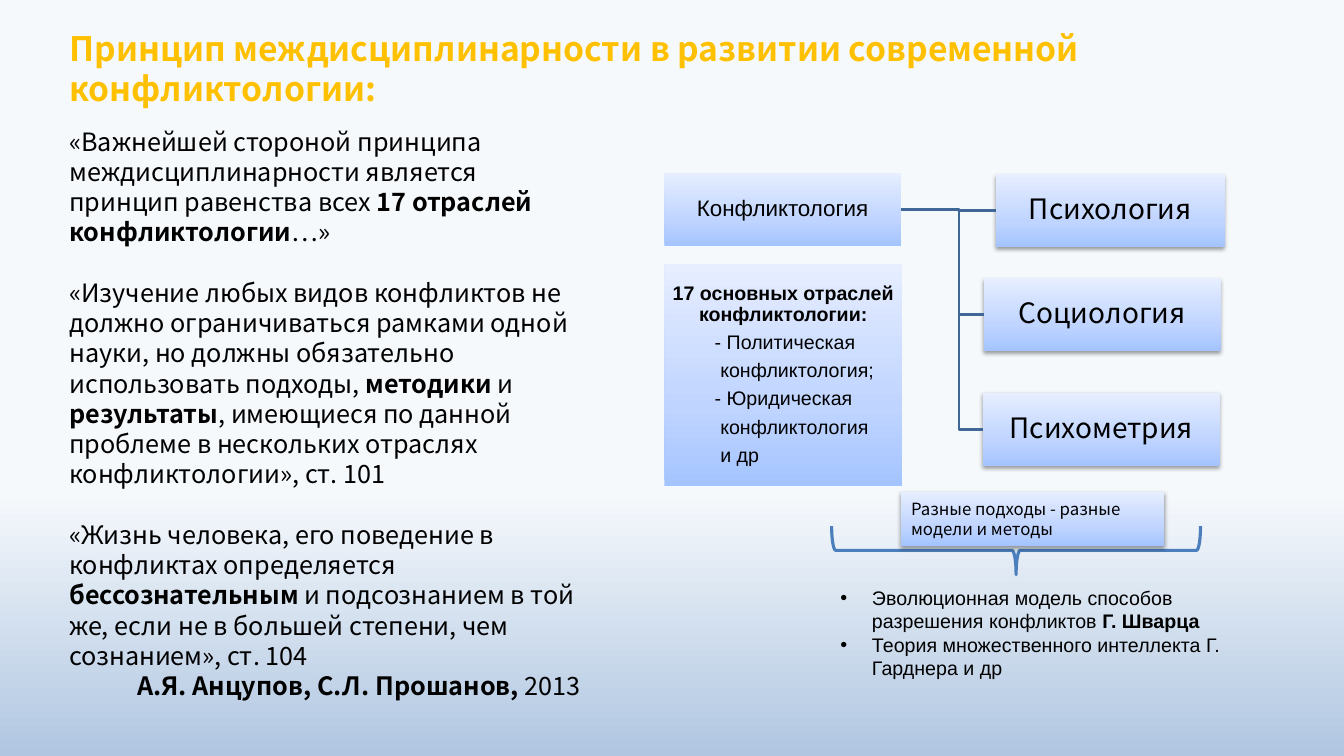
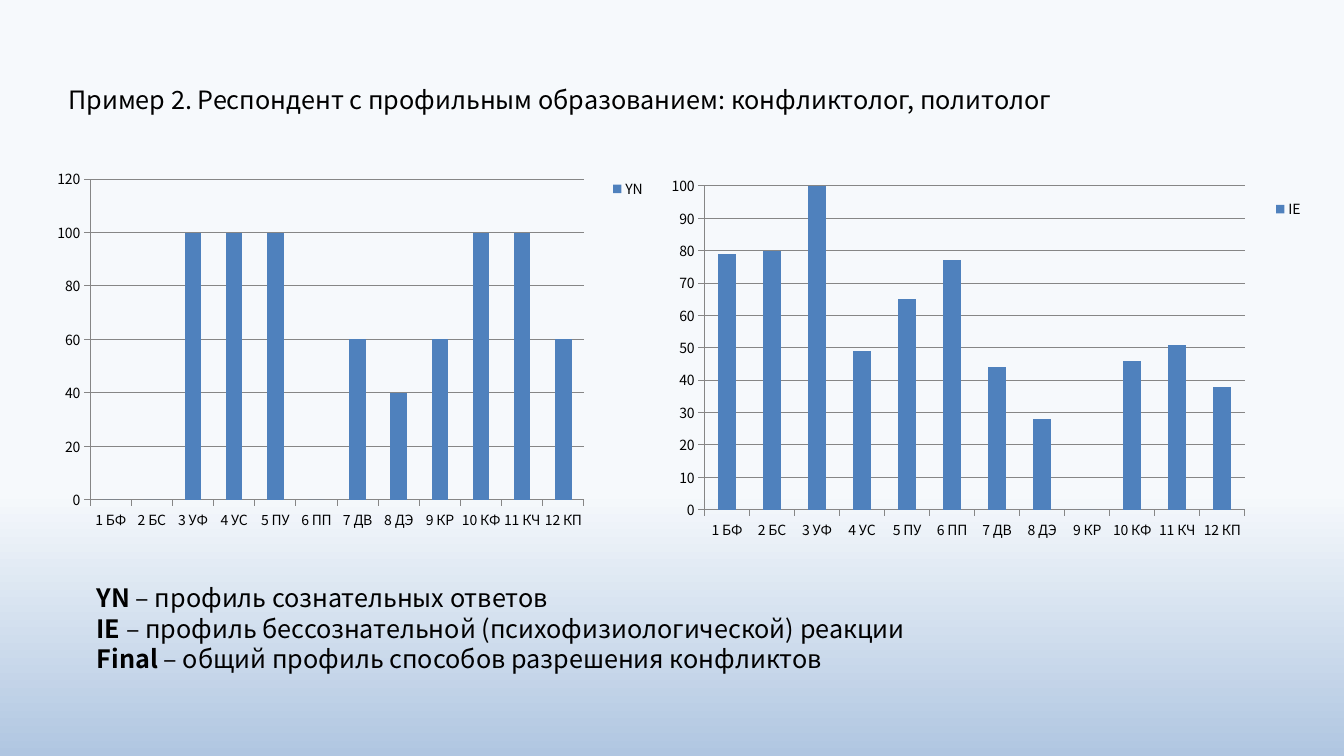
"""Build two slides on the interdisciplinary principle in conflict studies."""
import lxml.etree
import pptx
import pptx.chart.data
import pptx.dml.color
import pptx.enum.chart
import pptx.enum.shapes
import pptx.enum.text
import pptx.oxml.ns
import pptx.util

Pt = pptx.util.Pt
qn = pptx.oxml.ns.qn
ALIGN = pptx.enum.text.PP_ALIGN
SHAPE = pptx.enum.shapes.MSO_SHAPE

BODY_FONT = "Noto Sans CJK KR"
DIAGRAM_FONT = "Arial"
INK, GOLD, BAR, GRID = "000000", "FFC000", "4F81BD", "868686"
LINK, BRACE = "3F6797", "4B7EBC"
SKY = [(0, "F6F9FC"), (65, "F6F9FC"), (100, "B0C6E1")]
CARD = [(0, "A4C4FF"), (35, "BFD4FF"), (100, "E6EEFF")]
GAP = {"space_before": Pt(21.6)}
CENTRED = {"alignment": ALIGN.CENTER, "line_spacing": 0.9, "space_after": Pt(5)}
LISTED = {"alignment": ALIGN.LEFT, "line_spacing": 0.9, "space_after": Pt(5)}
TIGHT = {"margin_left": Pt(1), "margin_right": Pt(1), "margin_top": Pt(1), "margin_bottom": Pt(1)}
BULLET = {"margin": 22.5, "bullet": "•"}
TRUNK_X = 685

QUOTES = [
    ("«Важнейшей стороной принципа междисциплинарности является принцип равенства всех "
     "**17 отраслей конфликтологии**…»", {}),
    ("«Изучение любых видов конфликтов не должно ограничиваться рамками одной науки, но должны "
     "обязательно использовать подходы, **методики** и **результаты**, имеющиеся по данной "
     "проблеме в нескольких отраслях конфликтологии», ст. 101", GAP),
    ("«Жизнь человека, его поведение в конфликтах определяется **бессознательным** и подсознанием "
     "в той же, если не в большей степени, чем сознанием», ст. 104", GAP),
    ("**А.Я. Анцупов, С.Л. Прошанов, **2013", {"alignment": ALIGN.RIGHT}),
]
BRANCHES = [
    ("**17 основных отраслей конфликтологии:**", CENTRED),
    ("- Политическая", {**LISTED, "margin": 35}),
    ("конфликтология;", {**LISTED, "margin": 39}),
    ("- Юридическая", {**LISTED, "margin": 35}),
    ("конфликтология", {**LISTED, "margin": 39}),
    ("и др", {**LISTED, "margin": 39}),
]
MODELS = [
    ("Эволюционная модель способов разрешения конфликтов **Г. Шварца**", BULLET),
    ("Теория множественного интеллекта Г. Гарднера и др", BULLET),
]
DISCIPLINES = [
    ("Психология", (711.4, 124.6, 163.4, 52)),
    ("Социология", (702.7, 198.7, 169.2, 52)),
    ("Психометрия", (702, 280.8, 169.2, 52)),
]
PROFILES = [
    ("**YN** – профиль сознательных ответов", {}),
    ("**IE** – профиль бессознательной (психофизиологической) реакции", {}),
    ("**Final** – общий профиль способов разрешения конфликтов", {}),
]
STRATEGIES = ["1 БФ", "2 БС", "3 УФ", "4 УС", "5 ПУ", "6 ПП",
              "7 ДВ", "8 ДЭ", "9 КР", "10 КФ", "11 КЧ", "12 КП"]
CONSCIOUS = [0, 0, 100, 100, 100, 0, 60, 40, 60, 100, 100, 60]
UNCONSCIOUS = [79, 80, 100, 49, 65, 77, 44, 28, 0, 46, 51, 38]


def rgb(code):
    """Turn a hex string into a colour."""
    return pptx.dml.color.RGBColor.from_string(code)


def points(box):
    """Turn a box of numbers into lengths."""
    return [Pt(value) for value in box]


def assign(target, values):
    """Set every named attribute on the target."""
    for name, value in values.items():
        setattr(target, name, value)


def add_node(parent, tag, **attributes):
    """Append an XML child with attributes."""
    return lxml.etree.SubElement(parent, qn(tag), {key: str(value) for key, value in attributes.items()})


def paint_gradient(fill, element, stops, angle):
    """Fill with a linear gradient of any number of stops."""
    fill.gradient()
    fill.gradient_angle = angle
    stop_list = next(element.iter(qn("a:gsLst")))
    for stop in list(stop_list):
        stop_list.remove(stop)
    for position, code in stops:
        add_node(add_node(stop_list, "a:gs", pos=position * 1000), "a:srgbClr", val=code)


def style_line(line, code, width):
    """Give a line its colour and width."""
    line.color.rgb = rgb(code)
    line.width = Pt(width)


def write_paragraph(paragraph, text, style, font):
    """Write text with ** around bold parts, and set its indents."""
    style = dict(style)
    margin, bullet = style.pop("margin", None), style.pop("bullet", None)
    assign(paragraph, style)
    properties = paragraph._p.get_or_add_pPr()
    if margin:
        properties.set("marL", str(Pt(margin)))
        properties.set("indent", str(Pt(-margin if bullet else 0)))
    if bullet:
        add_node(properties, "a:buFont", typeface=DIAGRAM_FONT)
        add_node(properties, "a:buChar", char=bullet)
    for index, part in enumerate(text.split("**")):
        if part:
            run = paragraph.add_run()
            run.text = part
            assign(run.font, {"name": font["name"], "size": Pt(font["size"]), "bold": index % 2 == 1})
            run.font.color.rgb = rgb(font.get("color", INK))


def write_text(frame, paragraphs, **font):
    """Fill a text frame with paragraphs."""
    frame.word_wrap = True
    for index, (text, style) in enumerate(paragraphs):
        paragraph = frame.add_paragraph() if index else frame.paragraphs[0]
        write_paragraph(paragraph, text, style, font)


def add_text(slide, box, paragraphs, **font):
    """Add a text box."""
    write_text(slide.shapes.add_textbox(*points(box)).text_frame, paragraphs, **font)


def add_card(slide, box, paragraphs, shadow=True, insets=TIGHT, **font):
    """Add a gradient rectangle with text."""
    card = slide.shapes.add_shape(SHAPE.RECTANGLE, *points(box))
    paint_gradient(card.fill, card.element, CARD, 90)
    card.line.fill.background()
    card.shadow.inherit = False
    if shadow:
        effects = next(card.element.iter(qn("a:effectLst")))
        outer = add_node(effects, "a:outerShdw", blurRad=Pt(3.1), dist=Pt(1.6), dir=5400000, rotWithShape=0)
        add_node(add_node(outer, "a:srgbClr", val=INK), "a:alpha", val=38000)
    assign(card.text_frame, {**insets, "vertical_anchor": pptx.enum.text.MSO_ANCHOR.MIDDLE})
    write_text(card.text_frame, paragraphs, **font)
    return card


def add_branch(slide, source, target):
    """Join two cards with an elbow that turns at the shared trunk."""
    elbow = slide.shapes.add_connector(pptx.enum.shapes.MSO_CONNECTOR.ELBOW, 0, 0, 0, 0)
    elbow.begin_connect(source, 3)
    elbow.end_connect(target, 1)
    style_line(elbow.line, LINK, 2)
    start = source.left + source.width
    turn = round((Pt(TRUNK_X) - start) / (target.left - start) * 100000)
    add_node(next(elbow.element.iter(qn("a:avLst"))), "a:gd", name="adj1", fmla=f"val {turn}")
    add_node(elbow.element.spPr, "a:effectLst")


def add_brace(slide, box):
    """Add a brace that points down."""
    brace = slide.shapes.add_shape(SHAPE.RIGHT_BRACE, *points(box))
    brace.rotation = 90
    brace.fill.background()
    brace.shadow.inherit = False
    style_line(brace.line, BRACE, 2.25)


def make_layout(**places):
    """Build a manual chart layout from fractions of the chart."""
    layout = lxml.etree.Element(qn("c:layout"))
    manual = add_node(layout, "c:manualLayout")
    if "w" in places:
        add_node(manual, "c:layoutTarget", val="inner")
    for mode in ("xMode", "yMode"):
        add_node(manual, f"c:{mode}", val="edge")
    for name, value in places.items():
        add_node(manual, f"c:{name}", val=value)
    return layout


def add_profile_chart(slide, box, name, values, top, step, plot, legend_y):
    """Add a column chart of one response profile."""
    data = pptx.chart.data.CategoryChartData(number_format="0")
    data.categories = STRATEGIES
    data.add_series(name, values)
    kind = pptx.enum.chart.XL_CHART_TYPE.COLUMN_CLUSTERED
    chart = slide.shapes.add_chart(kind, *points(box), data).chart
    assign(chart, {"has_title": False, "has_legend": True})
    assign(chart.font, {"name": BODY_FONT, "size": Pt(10)})
    chart.font.color.rgb = rgb(INK)
    assign(chart.legend, {"position": pptx.enum.chart.XL_LEGEND_POSITION.RIGHT, "include_in_layout": False})
    columns = chart.plots[0]
    assign(columns, {"gap_width": 150, "vary_by_categories": False})
    columns.series[0].format.fill.solid()
    columns.series[0].format.fill.fore_color.rgb = rgb(BAR)
    scale = chart.value_axis
    assign(scale, {"minimum_scale": 0, "maximum_scale": top, "major_unit": step, "has_major_gridlines": True})
    style_line(scale.major_gridlines.format.line, GRID, 0.75)
    for axis in (scale, chart.category_axis):
        axis.major_tick_mark = pptx.enum.chart.XL_TICK_MARK.OUTSIDE
        style_line(axis.format.line, GRID, 0.75)
    plot_area = next(chart.element.iter(qn("c:plotArea")))
    for layout in plot_area.findall(qn("c:layout")):
        plot_area.remove(layout)
    plot_area.insert(0, make_layout(**dict(zip("xywh", plot))))
    next(chart.element.iter(qn("c:legendPos"))).addnext(make_layout(x=0.93, y=legend_y))


def build_principle(slide):
    """Build the slide of quotes and related disciplines."""
    add_text(slide, (42.5, 16.5, 875, 65.5),
             [("**Принцип междисциплинарности в развитии современной конфликтологии:**", {})],
             name=BODY_FONT, size=24, color=GOLD)
    add_text(slide, (42.5, 86.5, 379.5, 422), QUOTES, name=BODY_FONT, size=18)
    core = add_card(slide, (474.5, 123.8, 169.2, 52), [("Конфликтология", CENTRED)],
                    shadow=False, name=DIAGRAM_FONT, size=16)
    for discipline, box in DISCIPLINES:
        card = add_card(slide, box, [(discipline, CENTRED)], name=BODY_FONT, size=20)
        add_branch(slide, core, card)
    add_card(slide, (474.5, 188.6, 170, 158.4), BRANCHES, shadow=False, name=DIAGRAM_FONT, size=14)
    add_brace(slide, (708.5, 261.4, 34.6, 263.5))
    add_text(slide, (593.3, 414.7, 311.8, 94.3), MODELS, name=DIAGRAM_FONT, size=14)
    add_card(slide, (643.7, 351.4, 188, 38.9),
             [("Разные подходы - разные модели и методы", {"alignment": ALIGN.LEFT})],
             insets={}, name=BODY_FONT, size=12)


def build_example(slide):
    """Build the slide of two response profiles."""
    add_profile_chart(slide, (29.5, 106.6, 435.6, 305.3), "YN", CONSCIOUS, 120, 20,
                      (0.08, 0.07, 0.81, 0.75), 0.06)
    add_profile_chart(slide, (465, 113, 476.6, 330.5), "IE", UNCONSCIOUS, 100, 10,
                      (0.08, 0.06, 0.81, 0.7), 0.08)
    add_text(slide, (62, 412.6, 628, 73), PROFILES, name=BODY_FONT, size=18)
    add_text(slide, (41.8, 56.9, 754, 29),
             [("Пример 2. Респондент с профильным образованием: конфликтолог, политолог", {})],
             name=BODY_FONT, size=18)


def main():
    """Build and save the presentation."""
    deck = pptx.Presentation()
    assign(deck, {"slide_width": Pt(960), "slide_height": Pt(540)})
    master = deck.slide_master
    paint_gradient(master.background.fill, master.element, SKY, 270)
    for build in (build_principle, build_example):
        build(deck.slides.add_slide(deck.slide_layouts[6]))
    deck.save("out.pptx")


if __name__ == "__main__":
    main()
